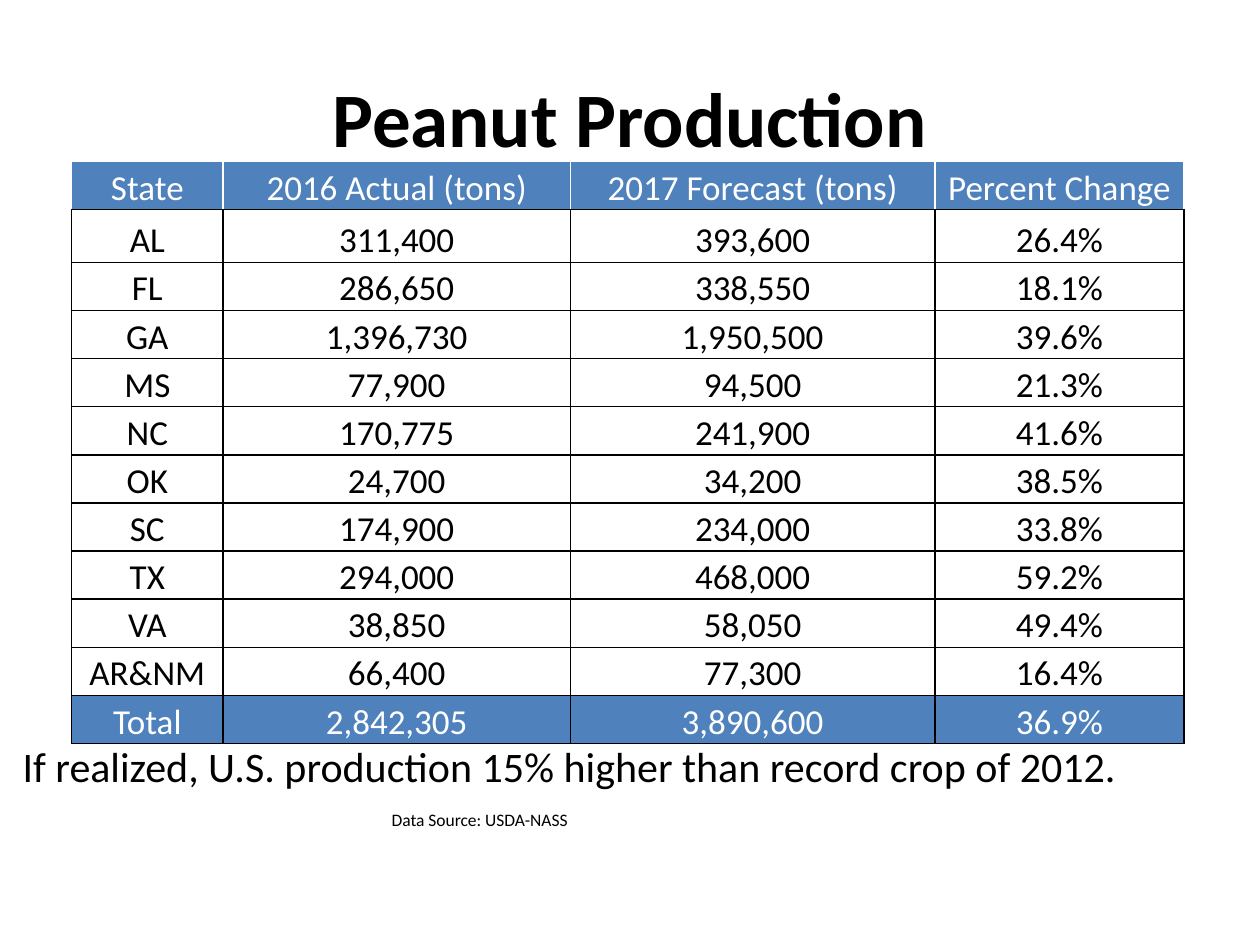
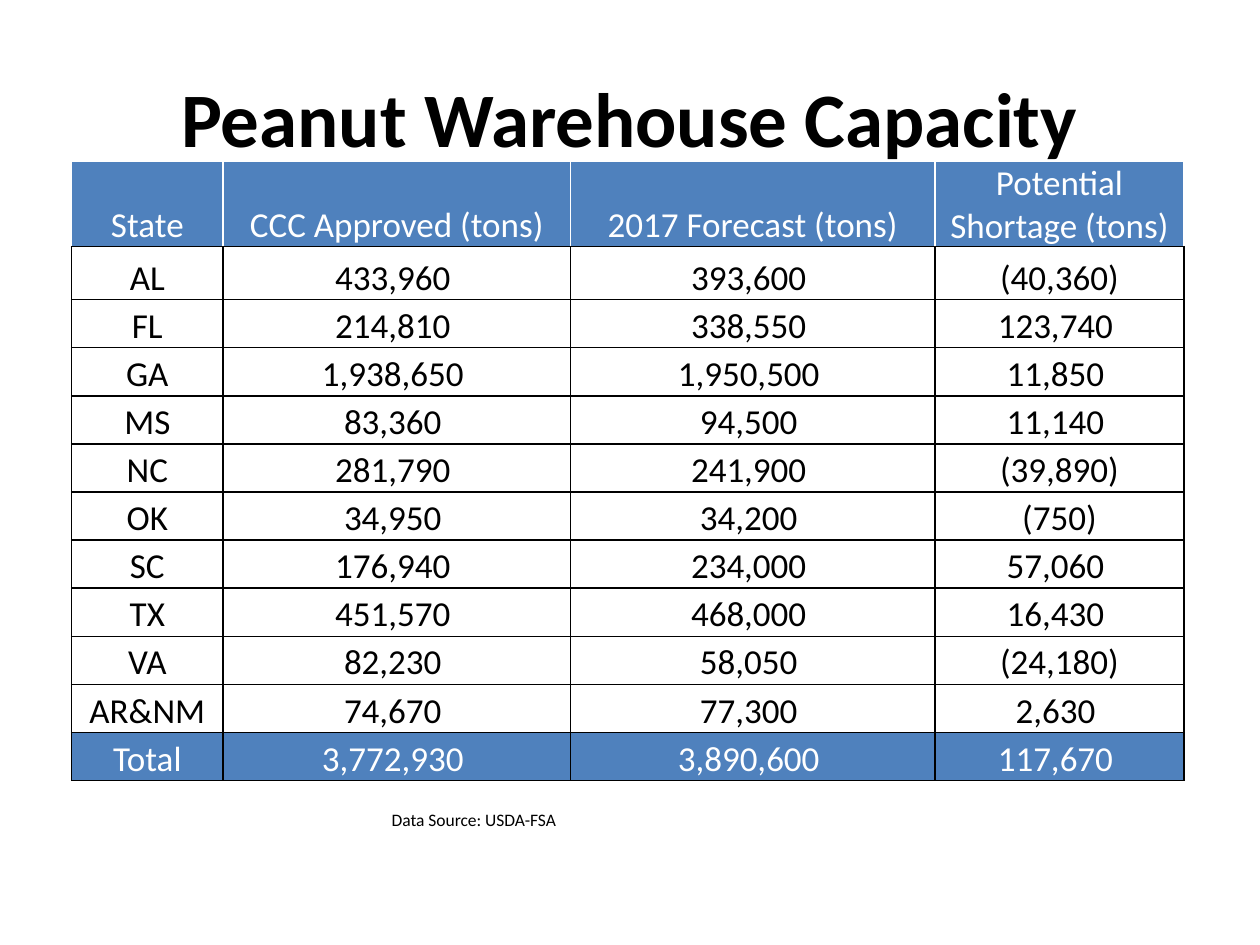
import pptx
import pptx.dml.color
import pptx.enum.text
import pptx.oxml
import pptx.oxml.ns
import pptx.util

Pt = pptx.util.Pt
PP_ALIGN = pptx.enum.text.PP_ALIGN
MSO_ANCHOR = pptx.enum.text.MSO_ANCHOR

FONT = "Calibri"
BLACK, WHITE, BLUE = "000000", "FFFFFF", "4F81BD"
COL_WIDTHS = [86.4, 198.7, 208.1, 142.5]
FIRST_ROW_H, ROW_H = 30.2, 27.5
INSET = 0.72
PAREN_W = 4.5  # room kept right of positive numbers, so they line up with "(n)"
STATES = ["AL", "FL", "GA", "MS", "NC", "OK", "SC", "TX", "VA", "AR&NM", "Total"]
FORECAST = ["393,600", "338,550", "1,950,500", "94,500", "241,900", "34,200",
            "234,000", "468,000", "58,050", "77,300", "3,890,600"]

SLIDES = [
    {
        "title": "Peanut Production",
        "header": ["State", "2016 Actual (tons)", "2017 Forecast (tons)", "Percent Change"],
        "header_h": ROW_H,
        "before": ["311,400", "286,650", "1,396,730", "77,900", "170,775", "24,700",
                   "174,900", "294,000", "38,850", "66,400", "2,842,305"],
        "result": ["26.4%", "18.1%", "39.6%", "21.3%", "41.6%", "38.5%",
                   "33.8%", "59.2%", "49.4%", "16.4%", "36.9%"],
        "accounting": False,
        "source": "Data Source: USDA-NASS",
        "note": "If realized, U.S. production 15% higher than record crop of 2012.",
    },
    {
        "title": "Peanut Warehouse Capacity",
        "header": ["State", "CCC Approved (tons)", "2017 Forecast (tons)",
                   "Potential Shortage (tons)"],
        "header_h": 48.5,
        "before": ["433,960", "214,810", "1,938,650", "83,360", "281,790", "34,950",
                   "176,940", "451,570", "82,230", "74,670", "3,772,930"],
        "result": ["(40,360)", "123,740", "11,850", "11,140", "(39,890)", "(750)",
                   "57,060", "16,430", "(24,180)", "2,630", "117,670"],
        "accounting": True,
        "source": "Data Source: USDA-FSA",
        "note": None,
    },
]


def rgb(hex_color):
    return pptx.dml.color.RGBColor.from_string(hex_color)


def write(tf, text, size, color=BLACK, bold=False, align=PP_ALIGN.LEFT):
    """Put one styled run into the first paragraph of a text frame."""
    tf.word_wrap = True
    p = tf.paragraphs[0]
    p.alignment = align
    r = p.add_run()
    r.text = text
    r.font.name, r.font.size, r.font.bold = FONT, Pt(size), bold
    r.font.color.rgb = rgb(color)


prs = pptx.Presentation()
prs.slide_width, prs.slide_height = Pt(720), Pt(540)

for data in SLIDES:
    s = prs.slides.add_slide(prs.slide_layouts[6])

    title = s.shapes.add_textbox(Pt(36), Pt(21.6), Pt(648), Pt(90))
    title.text_frame.vertical_anchor = MSO_ANCHOR.MIDDLE
    write(title.text_frame, data["title"], 44, bold=True, align=PP_ALIGN.CENTER)

    rows = [data["header"], *zip(STATES, data["before"], FORECAST, data["result"])]
    heights = [data["header_h"], FIRST_ROW_H] + [ROW_H] * (len(rows) - 2)
    table = s.shapes.add_table(len(rows), len(COL_WIDTHS), Pt(41), Pt(92.2),
                               Pt(sum(COL_WIDTHS)), Pt(sum(heights))).table
    table.first_row = table.horz_banding = False
    for col, width in zip(table.columns, COL_WIDTHS):
        col.width = Pt(width)

    for i, (values, height) in enumerate(zip(rows, heights)):
        table.rows[i].height = Pt(height)
        is_header = i == 0
        is_band = is_header or i == len(rows) - 1
        for j, text in enumerate(values):
            cell = table.cell(i, j)
            cell.vertical_anchor = MSO_ANCHOR.BOTTOM
            cell.margin_left = cell.margin_top = cell.margin_right = Pt(INSET)
            cell.margin_bottom = 0
            if data["accounting"] and not is_header and j > 0 and not text.endswith(")"):
                cell.margin_right = Pt(INSET + PAREN_W)
            write(cell.text_frame, text, 20, WHITE if is_band else BLACK,
                  align=PP_ALIGN.CENTER)
            cell.fill.solid()
            cell.fill.fore_color.rgb = rgb(BLUE if is_band else WHITE)
            tcPr = cell._tc.get_or_add_tcPr()
            for k, side in enumerate("LRTB"):
                color = WHITE if is_header and side != "B" else BLACK
                tcPr.insert(k, pptx.oxml.parse_xml(
                    f'<a:ln{side} {pptx.oxml.ns.nsdecls("a")} w="{Pt(1)}"><a:solidFill>'
                    f'<a:srgbClr val="{color}"/></a:solidFill></a:ln{side}>'))

    source = s.shapes.add_textbox(Pt(216.7), Pt(458.6), Pt(309.6), Pt(19.4))
    write(source.text_frame, data["source"], 10)

    if data["note"]:
        note = s.shapes.add_textbox(Pt(5.8), Pt(419.8), Pt(704.2), Pt(25.2))
        write(note.text_frame, data["note"], 24)

prs.save("out.pptx")
